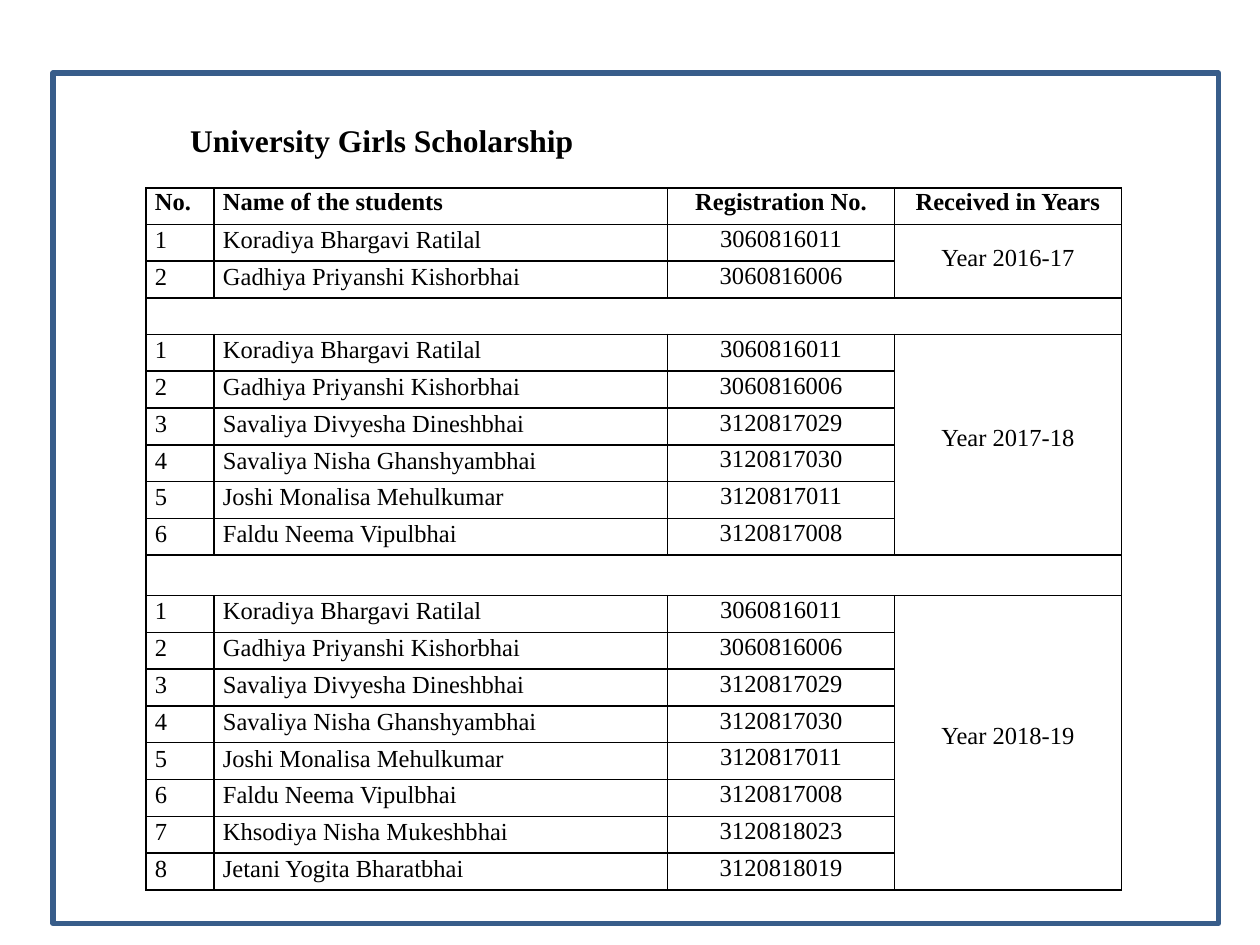
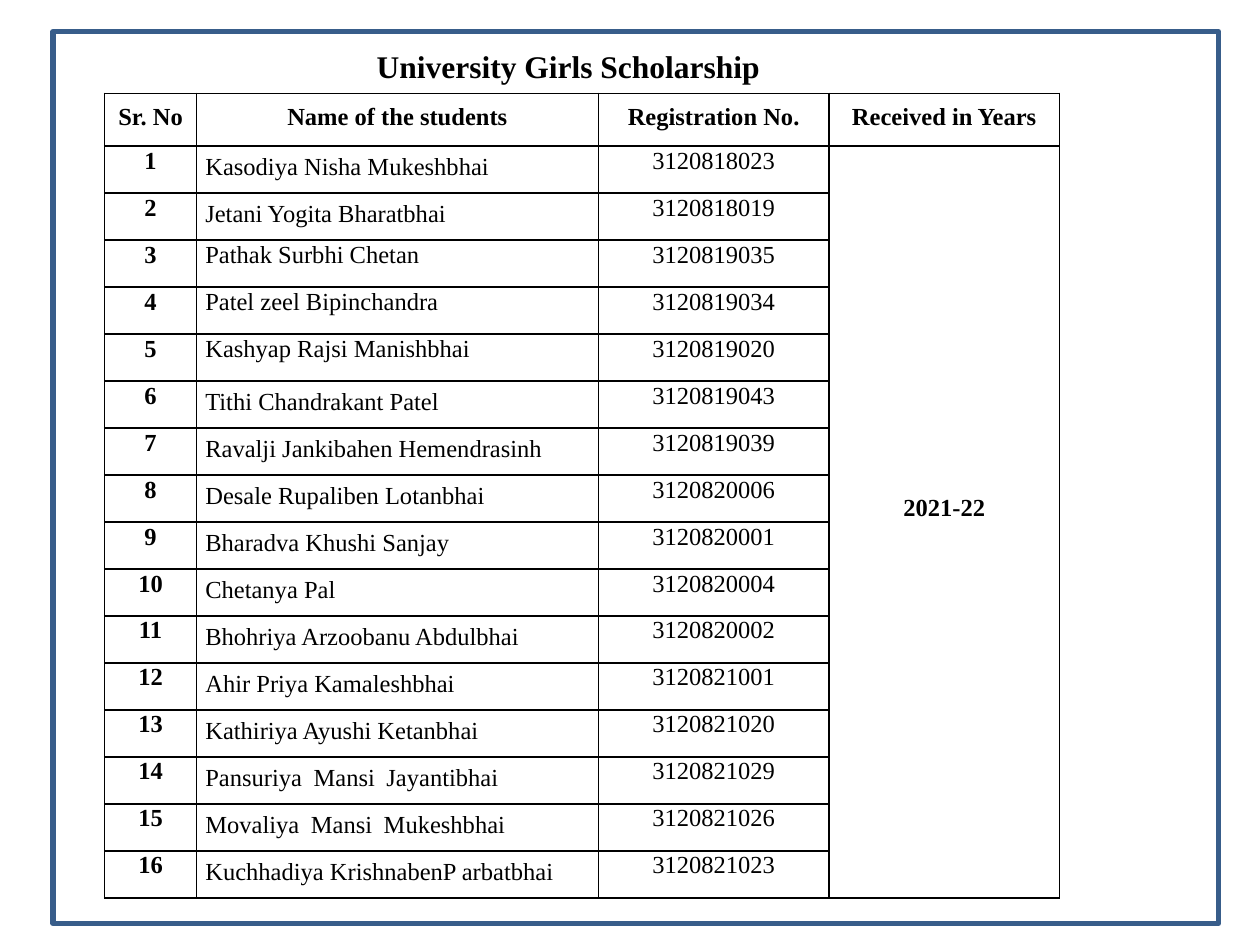
from dataclasses import dataclass
from typing import NamedTuple

from lxml import etree
from pptx import Presentation
from pptx import util as u
from pptx.dml.color import RGBColor
from pptx.enum import shapes, text
from pptx.oxml import ns

Inches = u.Inches
LEFT, CENTER = text.PP_ALIGN.LEFT, text.PP_ALIGN.CENTER


@dataclass(frozen=True)
class Theme:
    font: str = "Times New Roman"
    ink: RGBColor = RGBColor(0, 0, 0)
    frame: RGBColor = RGBColor(0x38, 0x5D, 0x8A)
    title_size: u.Pt = u.Pt(18)
    table_size: u.Pt = u.Pt(14)
    frame_width: u.Pt = u.Pt(3)
    border_width: u.Pt = u.Pt(1)


THEME = Theme()
TITLE = "University Girls Scholarship"


class Student(NamedTuple):
    name: str
    registration: str
    name_top: float = 0.02
    word_gap: float = 0  # extra points between words


class YearGroup(NamedTuple):
    label: str
    students: list[Student]
    label_lift: float  # bottom margin that raises the label above the middle
    spacer_before: float = 0


class Style(NamedTuple):
    """Text settings of one table column."""
    align: text.PP_ALIGN
    top: float
    bold: bool = False


class Page(NamedTuple):
    frame_top: float
    title_left: float
    title_top: float
    table_left: float
    table_top: float
    table_height: float
    column_widths: list[float]
    headings: list[str]
    heading_aligns: list[text.PP_ALIGN]
    heading_height: float
    heading_inset: float
    number_style: Style
    label_bold: bool
    groups: list[YearGroup]


EARLY_STUDENTS = [
    Student("Koradiya Bhargavi Ratilal", "3060816011"),
    Student("Gadhiya Priyanshi Kishorbhai", "3060816006"),
    Student("Savaliya Divyesha Dineshbhai", "3120817029"),
    Student("Savaliya Nisha Ghanshyambhai", "3120817030"),
    Student("Joshi Monalisa Mehulkumar", "3120817011"),
    Student("Faldu Neema Vipulbhai", "3120817008"),
    Student("Khsodiya Nisha Mukeshbhai", "3120818023"),
    Student("Jetani Yogita Bharatbhai", "3120818019"),
]
LATER_STUDENTS = [
    Student("Kasodiya Nisha Mukeshbhai", "3120818023", 0.06),
    Student("Jetani Yogita Bharatbhai", "3120818019", 0.06),
    Student("Pathak Surbhi Chetan", "3120819035", 0.01),
    Student("Patel zeel Bipinchandra", "3120819034", 0.01),
    Student("Kashyap Rajsi Manishbhai", "3120819020", 0.01),
    Student("Tithi Chandrakant Patel", "3120819043", 0.06),
    Student("Ravalji Jankibahen Hemendrasinh", "3120819039", 0.06),
    Student("Desale Rupaliben Lotanbhai", "3120820006", 0.06),
    Student("Bharadva Khushi Sanjay", "3120820001", 0.06),
    Student("Chetanya Pal", "3120820004", 0.06),
    Student("Bhohriya Arzoobanu Abdulbhai", "3120820002", 0.06),
    Student("Ahir Priya Kamaleshbhai", "3120821001", 0.06),
    Student("Kathiriya Ayushi Ketanbhai", "3120821020", 0.06),
    Student("Pansuriya Mansi Jayantibhai", "3120821029", 0.06, 3),
    Student("Movaliya Mansi Mukeshbhai", "3120821026", 0.06, 3),
    Student("Kuchhadiya KrishnabenP arbatbhai", "3120821023", 0.06),
]
PAGES = [
    Page(
        frame_top=0.58, title_left=1.51, title_top=0.95,
        table_left=1.16, table_top=1.49, table_height=5.58,
        column_widths=[0.54, 3.6, 1.8, 1.8],
        headings=["No.", "Name of the students", "Registration No.", "Received in Years"],
        heading_aligns=[LEFT, LEFT, CENTER, CENTER],
        heading_height=0.29, heading_inset=0.01,
        number_style=Style(LEFT, 0.02), label_bold=False,
        groups=[
            YearGroup("Year 2016-17", EARLY_STUDENTS[:2], 0.04),
            YearGroup("Year 2017-18", EARLY_STUDENTS[:6], 0.1, 0.29),
            YearGroup("Year 2018-19", EARLY_STUDENTS, 0.1, 0.32),
        ],
    ),
    Page(
        frame_top=0.25, title_left=2.99, title_top=0.36,
        table_left=0.83, table_top=0.74, table_height=6.39,
        column_widths=[0.73, 3.19, 1.83, 1.83],
        headings=["Sr. No", "Name of the students", "Registration No.", "Received in Years"],
        heading_aligns=[CENTER] * 4,
        heading_height=0.42, heading_inset=0.08,
        number_style=Style(CENTER, 0.01, True), label_bold=True,
        groups=[YearGroup("2021-22", LATER_STUDENTS, 0.22)],
    ),
]


def style_paragraph(paragraph, size: u.Pt, bold: bool, align=LEFT) -> None:
    paragraph.alignment = align
    font = paragraph.font
    font.name, font.size, font.bold = THEME.font, size, bold
    font.color.rgb = THEME.ink


def add_frame(slide, top: float) -> None:
    frame = slide.shapes.add_shape(
        shapes.MSO_SHAPE.RECTANGLE,
        Inches(0.42), Inches(top), Inches(9.25), Inches(7.33 - top))
    frame.shadow.inherit = False
    frame.fill.background()
    frame.line.color.rgb = THEME.frame
    frame.line.width = THEME.frame_width
    etree.SubElement(frame.line._get_or_add_ln(), ns.qn("a:round"))


def add_title(slide, left: float, top: float) -> None:
    box = slide.shapes.add_textbox(Inches(left), Inches(top), Inches(3.07), Inches(0.33))
    frame = box.text_frame
    frame.word_wrap = True
    frame.margin_left = frame.margin_right = frame.margin_bottom = 0
    frame.margin_top = Inches(0.01)
    frame.text = TITLE
    style_paragraph(frame.paragraphs[0], THEME.title_size, True)


def set_borders(cell) -> None:
    properties = cell._tc.get_or_add_tcPr()
    for index, side in enumerate(("lnL", "lnR", "lnT", "lnB")):
        line = etree.Element(ns.qn(f"a:{side}"), w=str(int(THEME.border_width)))
        fill = etree.SubElement(line, ns.qn("a:solidFill"))
        etree.SubElement(fill, ns.qn("a:srgbClr"), val=str(THEME.ink))
        properties.insert(index, line)


def write_cell(cell, words: str, style: Style, word_gap: float = 0) -> None:
    cell.margin_left = Inches(0.07 if style.align == LEFT else 0)
    cell.margin_top = Inches(style.top)
    paragraph = cell.text_frame.paragraphs[0]
    style_paragraph(paragraph, THEME.table_size, style.bold, style.align)
    if not word_gap:
        paragraph.add_run().text = words
        return
    for index, word in enumerate(words.split(" ")):
        if index:
            space = paragraph.add_run()
            space.text = " "
            space.font._element.set("spc", str(int(word_gap * 100)))
        paragraph.add_run().text = word


def add_grid(slide, page: Page):
    """Add the empty bordered table with its column widths and row heights."""
    spacers = sum(group.spacer_before for group in page.groups)
    student_count = sum(len(group.students) for group in page.groups)
    student_height = (page.table_height - page.heading_height - spacers) / student_count
    heights = [page.heading_height]
    for group in page.groups:
        if group.spacer_before:
            heights.append(group.spacer_before)
        heights += [student_height] * len(group.students)

    table = slide.shapes.add_table(
        len(heights), len(page.column_widths),
        Inches(page.table_left), Inches(page.table_top),
        Inches(sum(page.column_widths)), Inches(page.table_height)).table
    table.first_row = table.horz_banding = False
    for column, width in zip(table.columns, page.column_widths):
        column.width = Inches(width)
    for row, height in zip(table.rows, heights):
        row.height = Inches(height)
    for cell in table.iter_cells():
        cell.margin_left = cell.margin_right = cell.margin_top = cell.margin_bottom = 0
        cell.fill.background()
        set_borders(cell)
        style_paragraph(cell.text_frame.paragraphs[0], THEME.table_size, False)
    return table


def add_scholarship_table(slide, page: Page) -> None:
    table = add_grid(slide, page)
    for column, (heading, align) in enumerate(zip(page.headings, page.heading_aligns)):
        write_cell(table.cell(0, column), heading, Style(align, page.heading_inset, True))

    row = 1
    for group in page.groups:
        if group.spacer_before:
            table.cell(row, 0).merge(table.cell(row, 3))
            row += 1
        label = table.cell(row, 3)
        label.merge(table.cell(row + len(group.students) - 1, 3))
        write_cell(label, group.label, Style(CENTER, 0, page.label_bold))
        label.vertical_anchor = text.MSO_ANCHOR.MIDDLE
        label.margin_bottom = Inches(group.label_lift)
        for number, student in enumerate(group.students, start=1):
            write_cell(table.cell(row, 0), str(number), page.number_style)
            write_cell(table.cell(row, 1), student.name,
                       Style(LEFT, student.name_top), student.word_gap)
            write_cell(table.cell(row, 2), student.registration, Style(CENTER, 0.01))
            row += 1


def main() -> None:
    presentation = Presentation()
    presentation.slide_width, presentation.slide_height = Inches(10), Inches(7.5)
    for page in PAGES:
        slide = presentation.slides.add_slide(presentation.slide_layouts[6])
        add_frame(slide, page.frame_top)
        add_scholarship_table(slide, page)
        add_title(slide, page.title_left, page.title_top)
    presentation.save("out.pptx")


if __name__ == "__main__":
    main()
